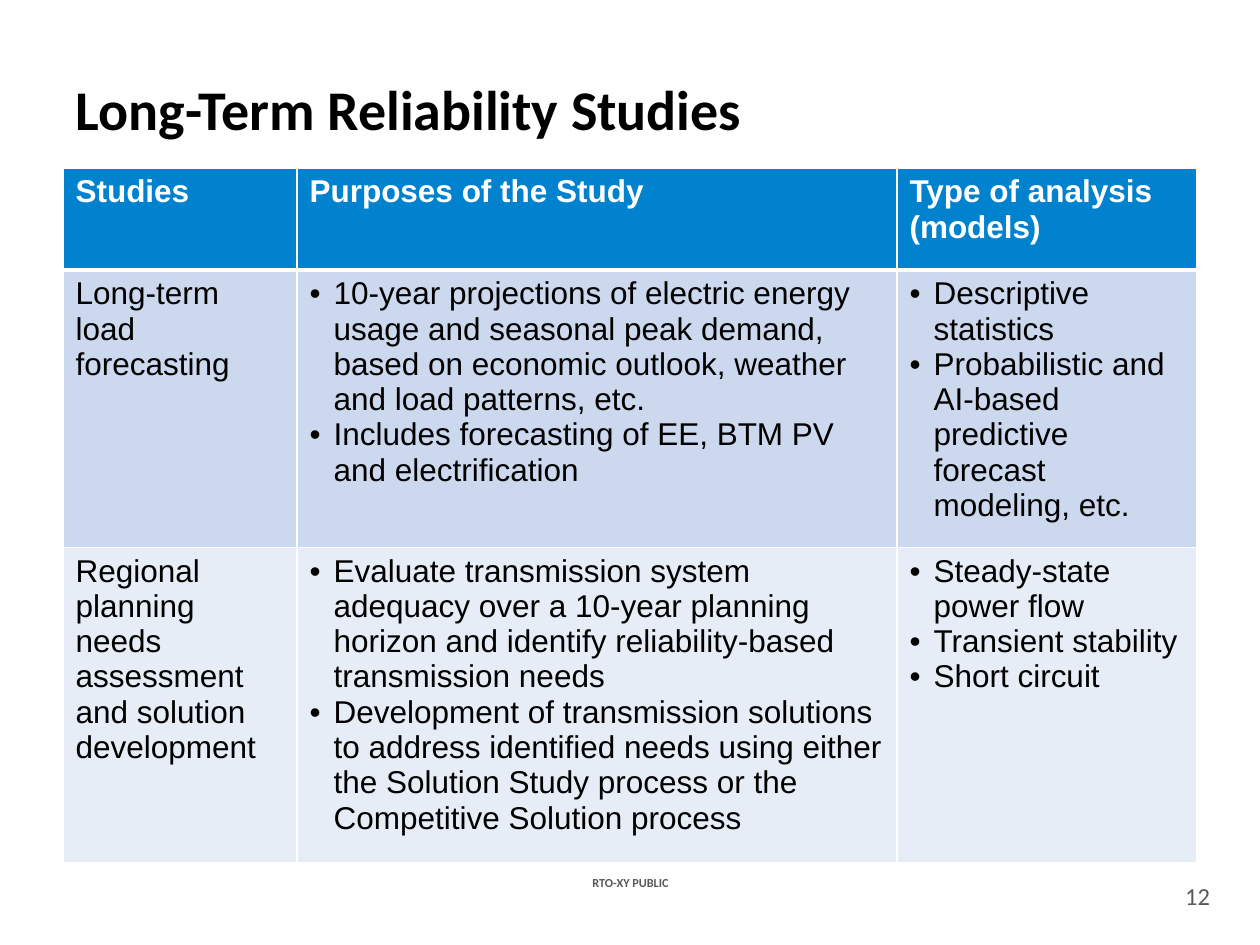
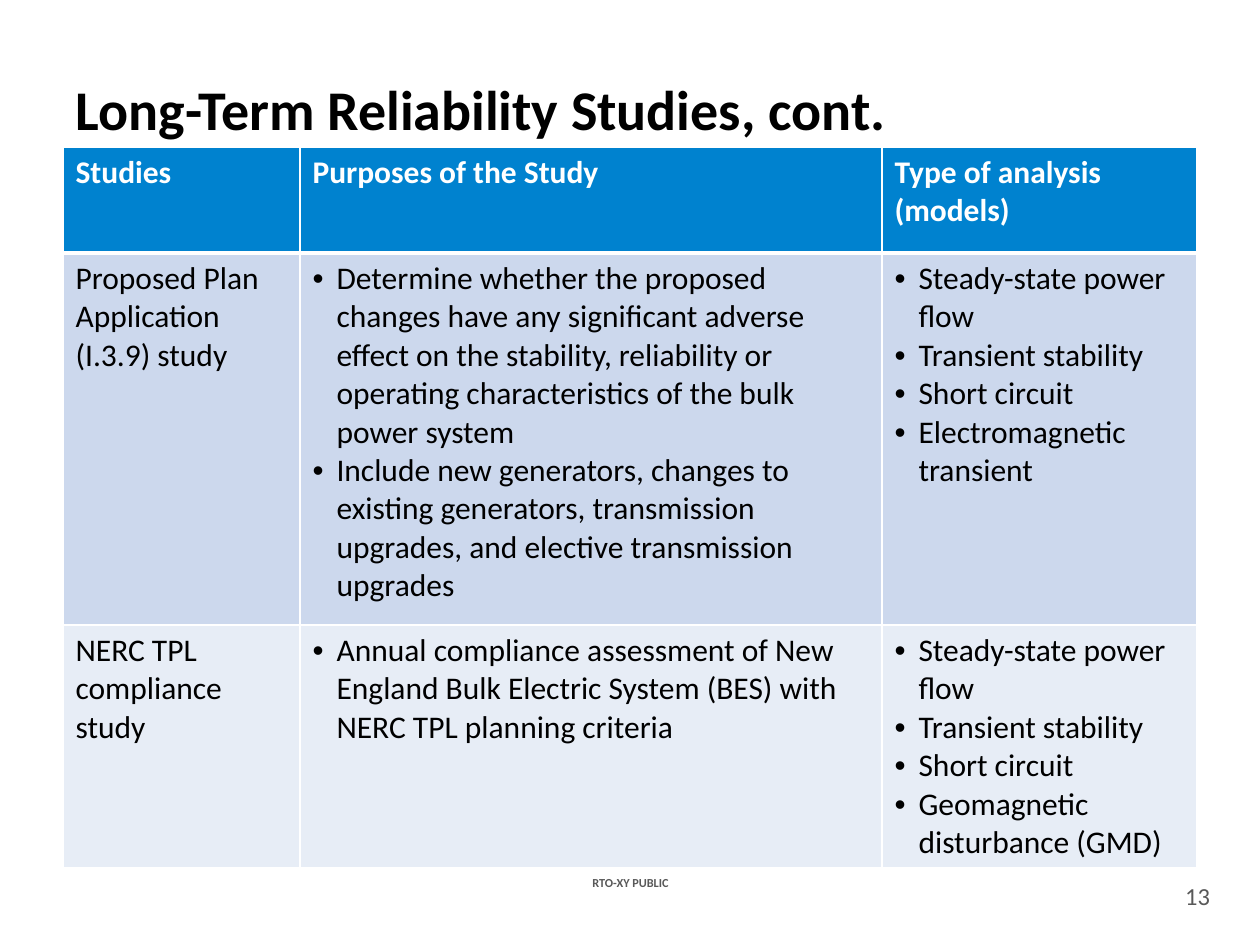
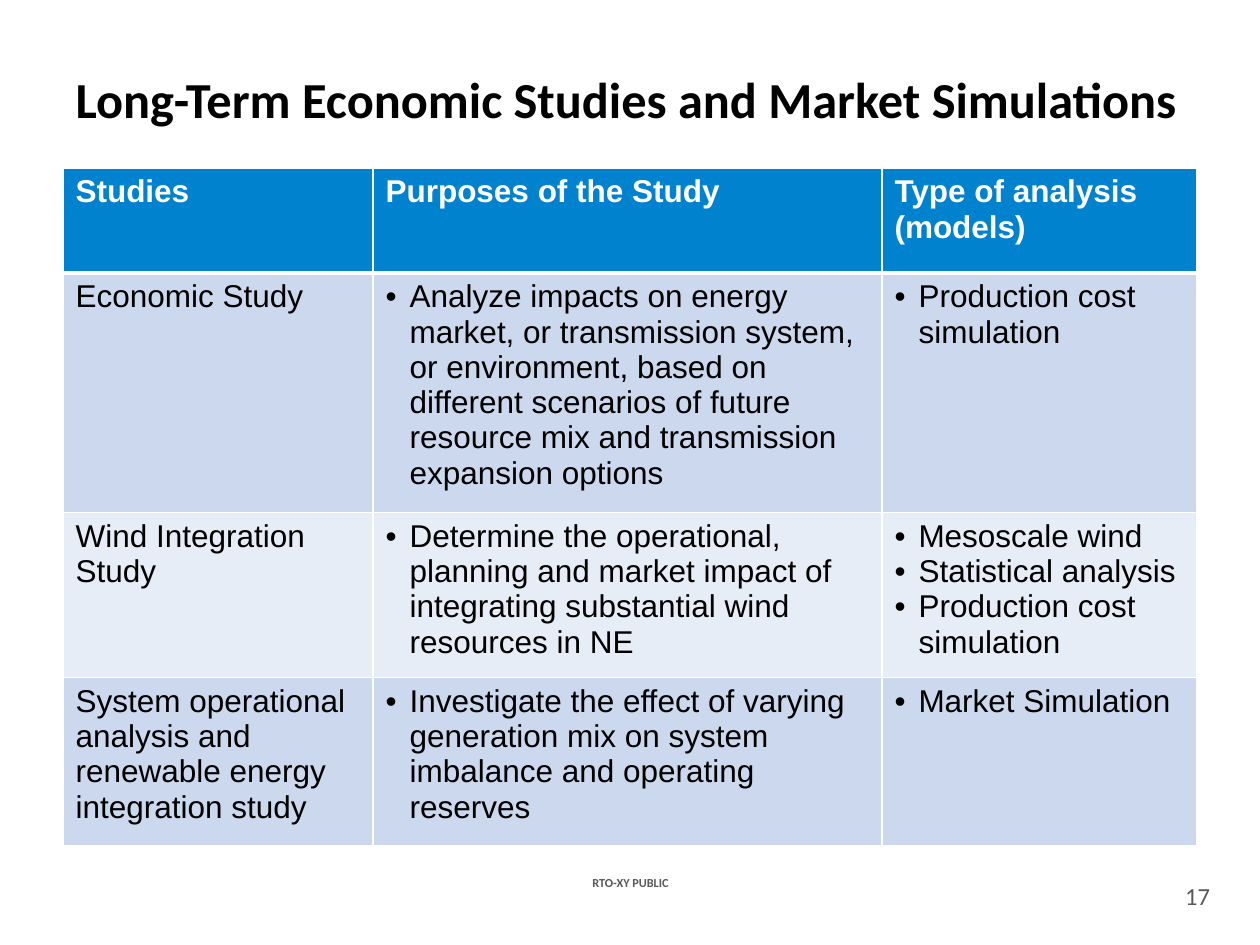
from dataclasses import dataclass

from lxml import etree
from pptx import Presentation
from pptx import util as u
from pptx.dml.color import RGBColor
from pptx.enum import text
from pptx.oxml import ns

EMU_PER_PX = u.Inches(1) / 126


@dataclass(frozen=True)
class Theme:
    title_font: str = "Calibri"
    ink: str = "000000"
    white: str = "FFFFFF"
    muted: str = "595959"
    header: str = "0082CF"
    bands: tuple = ("CCD8ED", "E7EDF6")
    title_size: float = 32
    small_title_size: float = 28.8
    table_size: float = 18
    number_size: float = 14
    footer_size: float = 7
    line: float = 1
    header_line: float = 3


THEME = Theme()
FOOTER = "RTO-XY PUBLIC"
HEADINGS = ["Studies", "Purposes of the Study", ["Type of analysis", "(models)"]]
TITLE_AREA = (63, 38, 1134, 141)
WIDE_TITLE_AREA = (63, 38, 1166, 120)
FOOTER_AREA = (538, 872, 185, 21)
NUMBER_AREA = (1176, 877, 43, 37)
TABLE_LEFT = 63
BULLET_INDENT = 24


# Lengths and text
def px(length):
    return u.Emu(round(length * EMU_PER_PX))


def set_values(target, values):
    for name, value in values.items():
        setattr(target, name, value)


def place(shape, area):
    set_values(shape, dict(zip(("left", "top", "width", "height"), map(px, area))))


def add_span(para, words, font, size, color, bold=False):
    span = para.add_run()
    span.text = words
    set_values(span.font, {"name": font, "size": u.Pt(size), "bold": bold})
    span.font.color.rgb = RGBColor.from_string(color)


def add_bullet(para):
    properties = para._p.get_or_add_pPr()
    indent = px(BULLET_INDENT)
    properties.set("marL", str(indent))
    properties.set("indent", str(-indent))
    etree.SubElement(properties, ns.qn("a:buFont"), typeface="Arial")
    etree.SubElement(properties, ns.qn("a:buChar"), char="•")


# Title, footer and page number
def add_title(page, words, area, size):
    title = page.shapes.title
    place(title, area)
    frame = title.text_frame
    set_values(frame, {
        "word_wrap": True,
        "auto_size": text.MSO_AUTO_SIZE.NONE,
        "vertical_anchor": text.MSO_ANCHOR.MIDDLE,
    })
    para = frame.paragraphs[0]
    para.alignment = text.PP_ALIGN.LEFT
    add_span(para, words, THEME.title_font, size, THEME.ink, True)


def add_label(page, words, area, size, bold=False):
    box = page.shapes.add_textbox(*map(px, area))
    frame = box.text_frame
    set_values(frame, {
        "word_wrap": True,
        "vertical_anchor": text.MSO_ANCHOR.MIDDLE,
        "margin_left": 0, "margin_right": 0,
        "margin_top": 0, "margin_bottom": 0,
    })
    para = frame.paragraphs[0]
    para.alignment = text.PP_ALIGN.CENTER
    add_span(para, words, THEME.title_font, size, THEME.muted, bold)


# Study table
def set_borders(cell, top, bottom):
    properties = cell._tc.get_or_add_tcPr()
    widths = {"L": THEME.line, "R": THEME.line, "T": top, "B": bottom}
    for index, (side, width) in enumerate(widths.items()):
        line = etree.Element(ns.qn(f"a:ln{side}"), w=str(u.Pt(width)))
        fill = etree.SubElement(line, ns.qn("a:solidFill"))
        etree.SubElement(fill, ns.qn("a:srgbClr"), val=THEME.white)
        properties.insert(index, line)


def fill_cell(cell, content, font, row, column):
    is_header = row == 0
    set_borders(
        cell,
        top=THEME.header_line if row == 1 else THEME.line,
        bottom=THEME.header_line if is_header else THEME.line,
    )
    background = THEME.header if is_header else THEME.bands[(row - 1) % 2]
    cell.fill.solid()
    cell.fill.fore_color.rgb = RGBColor.from_string(background)
    color = THEME.white if is_header else THEME.ink
    lines = [content] if isinstance(content, str) else content
    frame = cell.text_frame
    for index, words in enumerate(lines):
        para = frame.add_paragraph() if index else frame.paragraphs[0]
        if column and not is_header:
            add_bullet(para)
        add_span(para, words, font, THEME.table_size, color, is_header)


def add_study_table(page, top, widths, heights, studies, font):
    rows = [HEADINGS, *studies]
    area = (TABLE_LEFT, top, sum(widths), sum(heights))
    table = page.shapes.add_table(len(rows), len(widths), *map(px, area)).table
    for column, width in zip(table.columns, widths):
        column.width = px(width)
    for row, height in zip(table.rows, heights):
        row.height = px(height)
    for row, contents in enumerate(rows):
        for column, content in enumerate(contents):
            fill_cell(table.cell(row, column), content, font, row, column)


def add_page(deck, number, title, top, widths, heights, studies, font="Arial",
             title_area=TITLE_AREA, title_size=THEME.title_size):
    page = deck.slides.add_slide(deck.slide_layouts[5])
    add_label(page, FOOTER, FOOTER_AREA, THEME.footer_size, True)
    add_title(page, title, title_area, title_size)
    add_study_table(page, top, widths, heights, studies, font)
    add_label(page, str(number), NUMBER_AREA, THEME.number_size)


# Content
RELIABILITY = [
    ["Long-term load forecasting",
     ["10-year projections of electric energy usage and seasonal peak demand, "
      "based on economic outlook, weather and load patterns, etc.",
      "Includes forecasting of EE, BTM PV and electrification"],
     ["Descriptive statistics",
      "Probabilistic and AI-based predictive forecast modeling, etc."]],
    ["Regional planning needs assessment and solution development",
     ["Evaluate transmission system adequacy over a 10-year planning horizon "
      "and identify reliability-based transmission needs",
      "Development of transmission solutions to address identified needs using "
      "either the Solution Study process or the Competitive Solution process"],
     ["Steady-state power flow", "Transient stability", "Short circuit"]],
]
RELIABILITY_CONTINUED = [
    ["Proposed Plan Application (I.3.9) study",
     ["Determine whether the proposed changes have any significant adverse "
      "effect on the stability, reliability or operating characteristics of "
      "the bulk power system",
      "Include new generators, changes to existing generators, transmission "
      "upgrades, and elective transmission upgrades"],
     ["Steady-state power flow", "Transient stability", "Short circuit",
      "Electromagnetic transient"]],
    ["NERC TPL compliance study",
     ["Annual compliance assessment of New England Bulk Electric System (BES) "
      "with NERC TPL planning criteria"],
     ["Steady-state power flow", "Transient stability", "Short circuit",
      "Geomagnetic disturbance (GMD)"]],
]
ECONOMIC = [
    ["Economic Study",
     ["Analyze impacts on energy market, or transmission system, or "
      "environment, based on different scenarios of future resource mix and "
      "transmission expansion options"],
     ["Production cost simulation"]],
    ["Wind Integration Study",
     ["Determine the operational, planning and market impact of integrating "
      "substantial wind resources in NE"],
     ["Mesoscale wind", "Statistical analysis", "Production cost simulation"]],
    ["System operational analysis and renewable energy integration study",
     ["Investigate the effect of varying generation mix on system imbalance "
      "and operating reserves"],
     ["Market Simulation"]],
]


def main():
    deck = Presentation()
    set_values(deck, {"slide_width": px(1260), "slide_height": px(945)})
    add_page(deck, 12, "Long-Term Reliability Studies", 168,
             (234, 600, 300), (102, 260, 294), RELIABILITY)
    add_page(deck, 13, "Long-Term Reliability Studies, cont.", 147,
             (237, 582, 315), (106, 372, 243), RELIABILITY_CONTINUED,
             font="Calibri")
    add_page(deck, 17, "Long-Term Economic Studies and Market Simulations", 168,
             (310, 509, 315), (105, 224, 165, 168), ECONOMIC,
             title_area=WIDE_TITLE_AREA, title_size=THEME.small_title_size)
    deck.save("out.pptx")


if __name__ == "__main__":
    main()
